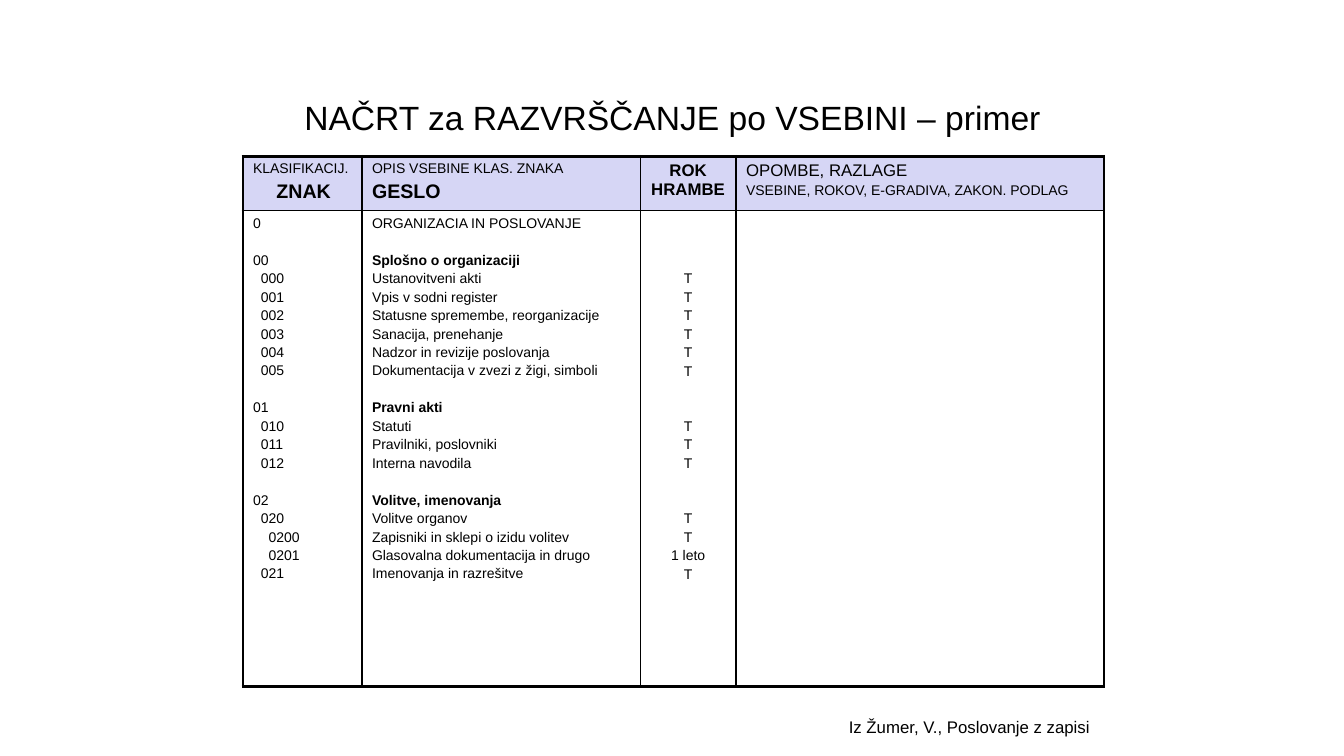
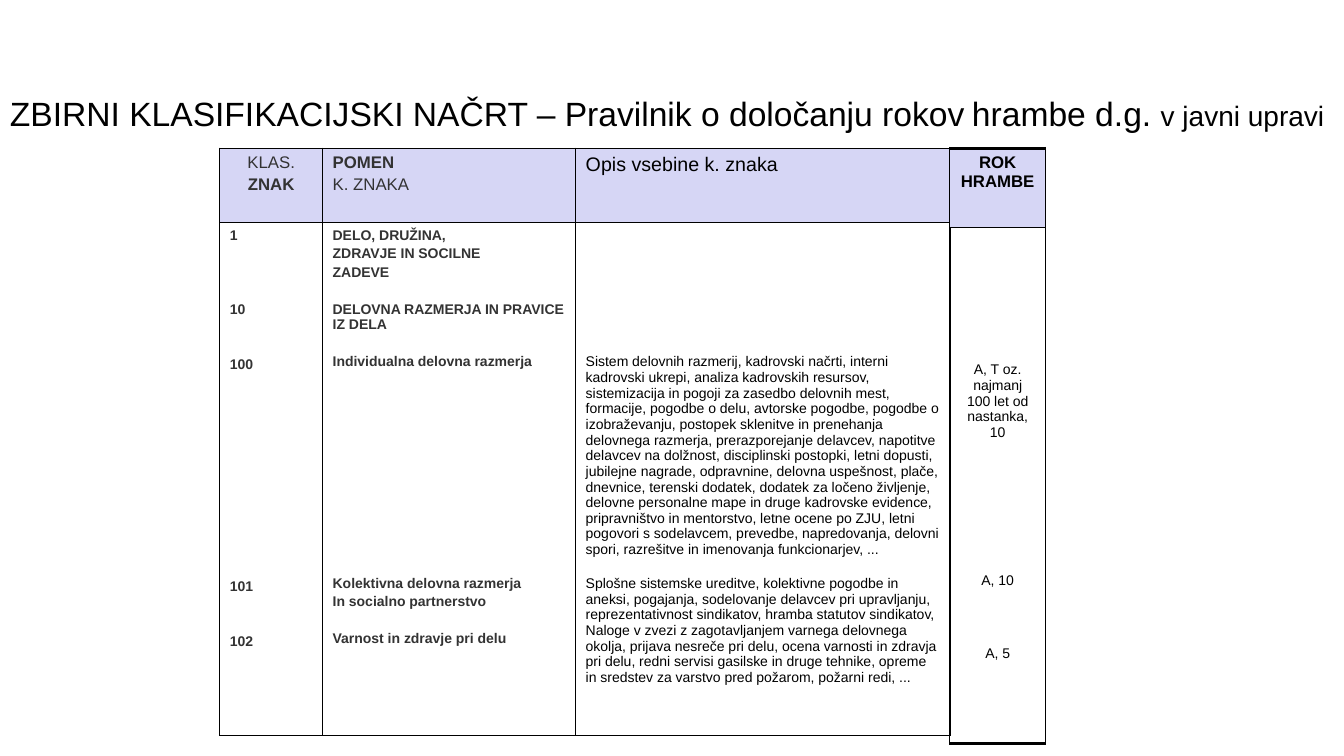
"""Build two slides with tables of a records classification plan."""
from lxml import etree
from pptx import Presentation
from pptx import util as u
from pptx.dml.color import RGBColor
from pptx.enum import text as t
from pptx.oxml.ns import qn

BLACK, GREY, LILAC = "000000", "333333", "D6D6F5"
LINE = 13.2
STEP = 0.077
TIGHT = 0.85
MID, LEFT = t.PP_ALIGN.CENTER, t.PP_ALIGN.LEFT


def paint(fill, tone):
    fill.solid()
    fill.fore_color.rgb = RGBColor.from_string(tone)


def write(box, paras, align=LEFT, tone=BLACK):
    """Write (skip, text, format) items; skip counts lines down, None stays on the line."""
    frame = getattr(box, "text_frame", box)
    para = frame.paragraphs[0]
    for i, (skip, words, look) in enumerate(paras):
        look = {"name": "Arial", "size": 10, "bold": False} | look
        pad = look.pop("pad", 0)
        if i == 0:
            box.margin_top = u.Inches(0.05 + skip * LINE / 72)
        elif skip is not None:
            para = frame.add_paragraph()
            para.space_before = u.Pt(LINE * (skip - 1) + 0.2 * look["size"])
        para.alignment = align
        if pad:
            para._p.get_or_add_pPr().set("marL", str(u.Inches(pad)))
        run = para.add_run()
        run.text = words
        paint(run.font.fill, tone)
        look["size"] = u.Pt(look["size"])
        for key, val in look.items():
            setattr(run.font, key, val)


HEAD = {"size": 12, "bold": True}
BOLD = {"bold": True}
TERM = [(0, "ROK HRAMBE", HEAD)]

plan = [
    (0, "0", "ORGANIZACIA IN POSLOVANJE", ""),
    (2, "00", "Splošno o organizaciji", ""),
    (3, "000", "Ustanovitveni akti", "T"),
    (4, "001", "Vpis v sodni register", "T"),
    (5, "002", "Statusne spremembe, reorganizacije", "T"),
    (6, "003", "Sanacija, prenehanje", "T"),
    (7, "004", "Nadzor in revizije poslovanja", "T"),
    (8, "005", "Dokumentacija v zvezi z žigi, simboli", "T"),
    (10, "01", "Pravni akti", ""),
    (11, "010", "Statuti", "T"),
    (12, "011", "Pravilniki, poslovniki", "T"),
    (13, "012", "Interna navodila", "T"),
    (15, "02", "Volitve, imenovanja", ""),
    (16, "020", "Volitve organov", "T"),
    (17, "0200", "Zapisniki in sklepi o izidu volitev", "T"),
    (18, "0201", "Glasovalna dokumentacija in drugo", "1 leto"),
    (19, "021", "Imenovanja in razrešitve", "T"),
]
codes, names, terms = [], [], []
last = {"code": 0, "term": 0}
for row, code, name, term in plan:
    skip = row - last["code"]
    codes.append((skip, code, {"pad": STEP * max(0, len(code) - 2)}))
    names.append((skip, name, {"bold": len(code) == 2}))
    last["code"] = row
    if term:
        terms.append((row - last["term"], term, {}))
        last["term"] = row

first = [
    [
        ([(0, "KLASIFIKACIJ.", {}), (1, "ZNAK", {"size": 14, "bold": True, "pad": 3 * STEP})],),
        ([(0, "OPIS VSEBINE KLAS. ZNAKA", {}), (1, "GESLO", {"size": 14, "bold": True})],),
        (TERM, MID),
        ([(0, "OPOMBE, RAZLAGE", {"size": 12}),
          (1, "VSEBINE, ROKOV, E-GRADIVA, ZAKON. PODLAG", {})],),
    ],
    [(codes,), (names,), (terms, MID), ([],)],
]

staff = (
    "Sistem delovnih razmerij, kadrovski načrti, interni kadrovski ukrepi, analiza "
    "kadrovskih resursov, sistemizacija in pogoji za zasedbo delovnih mest, formacije, "
    "pogodbe o delu, avtorske pogodbe, pogodbe o izobraževanju, postopek sklenitve in "
    "prenehanja delovnega razmerja, prerazporejanje delavcev, napotitve delavcev na "
    "dolžnost, disciplinski postopki, letni dopusti, jubilejne nagrade, odpravnine, "
    "delovna uspešnost, plače, dnevnice, terenski dodatek, dodatek za ločeno življenje, "
    "delovne personalne mape in druge kadrovske evidence, pripravništvo in mentorstvo, "
    "letne ocene po ZJU, letni pogovori s sodelavcem, prevedbe, napredovanja, delovni "
    "spori, razrešitve in imenovanja funkcionarjev, ..."
)
union = (
    "Splošne sistemske ureditve, kolektivne pogodbe in aneksi, pogajanja, sodelovanje "
    "delavcev pri upravljanju, reprezentativnost sindikatov, hramba statutov sindikatov,"
)
safe = (
    "Naloge v zvezi z zagotavljanjem varnega delovnega okolja, prijava nesreče pri delu, "
    "ocena varnosti in zdravja pri delu, redni servisi gasilske in druge tehnike, opreme "
    "in sredstev za varstvo pred požarom, požarni redi, ..."
)
second = [
    [
        ([(0, "KLAS.", {"size": 12}), (1, "ZNAK", HEAD)], MID, GREY),
        ([(0, "POMEN", HEAD), (1, "K. ZNAKA", {"size": 12})], LEFT, GREY),
        ([(0, "Opis vsebine k. znaka", {"size": 14})],),
    ],
    [
        ([(0, "1", BOLD), (4, "10", BOLD), (3, "100", BOLD), (12, "101", BOLD),
          (3, "102", BOLD)], LEFT, GREY),
        ([(0, "DELO, DRUŽINA,", BOLD), (1, "ZDRAVJE IN SOCILNE", BOLD), (1, "ZADEVE", BOLD),
          (2, "DELOVNA RAZMERJA IN PRAVICE IZ DELA", BOLD),
          (2, "Individualna delovna razmerja", BOLD),
          (12, "Kolektivna delovna razmerja", BOLD), (1, "In socialno partnerstvo", BOLD),
          (2, "Varnost in zdravje pri delu", BOLD)], LEFT, GREY),
        ([(6 + TIGHT, staff, {}), (1 + TIGHT, union, {}), (TIGHT, safe, {})],),
    ],
]
third = [
    [(TERM, MID)],
    [([(7, "A, T oz. najmanj 100 let od nastanka, 10", {}), (8, "A, 10", {}),
       (4, "A, 5", {})], MID)],
]

title = [
    (0, "ZBIRNI KLASIFIKACIJSKI NAČRT – Pravilnik o določanju rokov", {"size": 24}),
    (None, " ", {"size": 18}),
    (None, "hrambe d.g. ", {"size": 24}),
    (None, "v javni upravi", {"size": 20}),
]
pages = [
    {
        "grids": [((2.41, 1.55), (1.18, 2.76, 0.95, 3.65), (0.54, 4.72),
                   {"L": 2.25, "R": 2.25, "T": 2.25, "B": 2.25}, first)],
        "texts": [
            ((1.67, 0.91, 10, 0.5), True, MID,
             [(0, "NAČRT za RAZVRŠČANJE po VSEBINI – primer", {"size": 24})]),
            ((8.32, 7.06, 2.62, 0.3), False, LEFT,
             [(0, "Iz Žumer, V., Poslovanje z zapisi", {"size": 12})]),
        ],
    },
    {
        "grids": [
            ((2.18, 1.47), (1.02, 2.51, 3.72), (0.74, 5.09), {}, second),
            ((9.42, 1.47), (0.95,), (0.79, 5.12), {"T": 2.25, "B": 2.25}, third),
        ],
        "texts": [((0, 0.87, 13.33, 0.91), True, LEFT, title)],
    },
]

deck = Presentation()
deck.slide_width, deck.slide_height = u.Inches(13.33), u.Inches(7.5)
for page in pages:
    slide = deck.slides.add_slide(deck.slide_layouts[6])
    for spot, cols, rows, edge, cells in page["grids"]:
        size = sum(cols), sum(rows)
        grid = slide.shapes.add_table(
            len(rows), len(cols), *map(u.Inches, spot + size)).table
        grid.first_row = grid.horz_banding = False
        for col, width in zip(grid.columns, cols):
            col.width = u.Inches(width)
        for r, height in enumerate(rows):
            grid.rows[r].height = u.Inches(height)
            for c, item in enumerate(cells[r]):
                cell = grid.cell(r, c)
                outer = {"L": c == 0, "R": c == len(cols) - 1,
                         "T": r == 0, "B": r == len(rows) - 1}
                props = cell._tc.get_or_add_tcPr()
                for side, out in outer.items():
                    wide = edge.get(side, 1) if out else 1
                    line = etree.SubElement(props, qn("a:ln" + side), w=str(u.Pt(wide)))
                    fill = etree.SubElement(line, qn("a:solidFill"))
                    etree.SubElement(fill, qn("a:srgbClr"), val=BLACK)
                if r == 0:
                    paint(cell.fill, LILAC)
                else:
                    cell.fill.background()
                write(cell, *item)
    for area, wrap, align, paras in page["texts"]:
        frame = slide.shapes.add_textbox(*map(u.Inches, area)).text_frame
        frame.word_wrap = wrap
        write(frame, paras, align)
deck.save("out.pptx")
